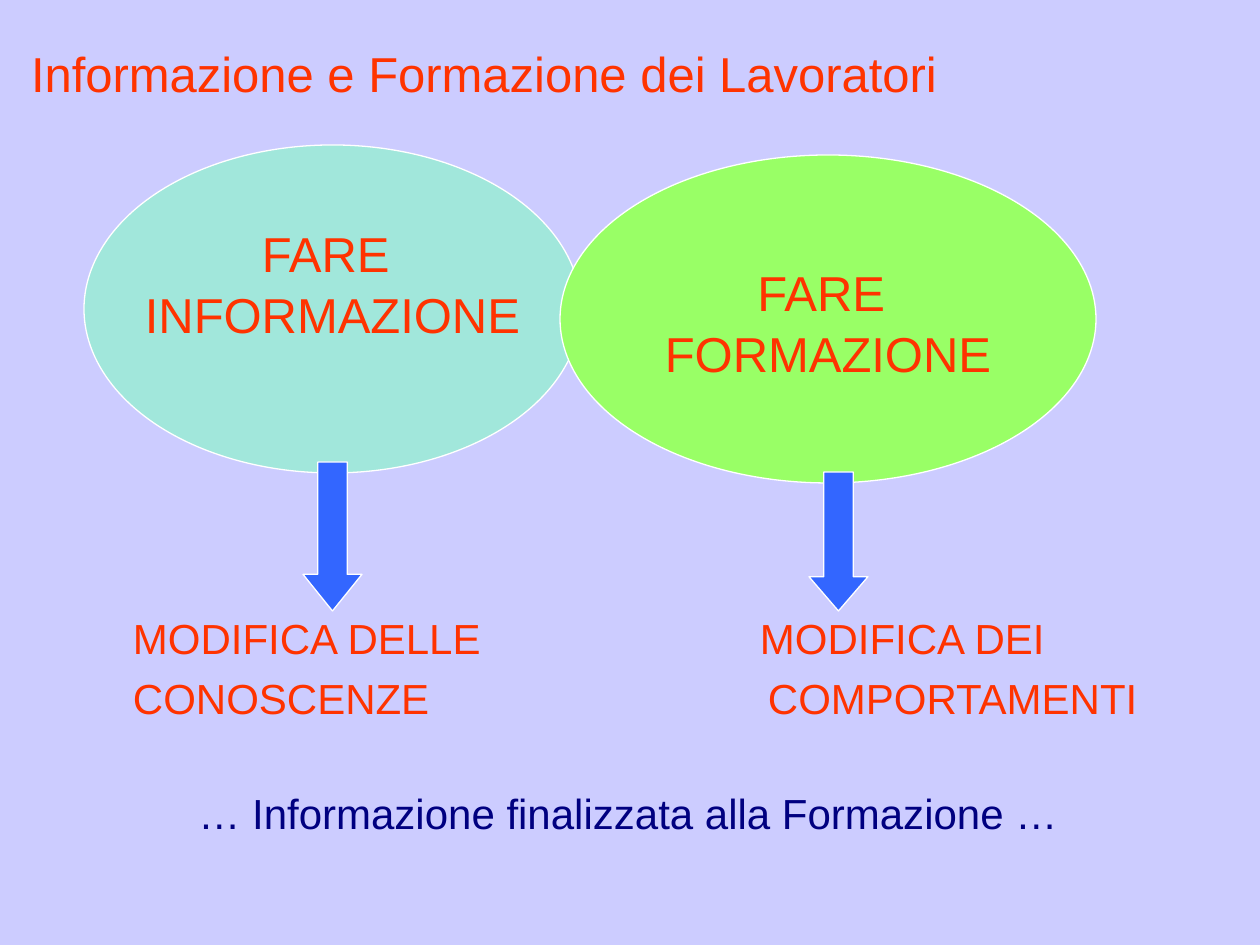
from dataclasses import dataclass

from pptx import Presentation
from pptx.dml.color import RGBColor
from pptx.enum.shapes import MSO_SHAPE
from pptx.enum.text import MSO_ANCHOR, PP_ALIGN
from pptx.util import Emu, Pt

ELLIPSE, DOWN_ARROW = MSO_SHAPE.OVAL, MSO_SHAPE.DOWN_ARROW
LEFT, CENTER = PP_ALIGN.LEFT, PP_ALIGN.CENTER
TOP, MIDDLE = MSO_ANCHOR.TOP, MSO_ANCHOR.MIDDLE
TITLE_ONLY = 5
PX = 914400 // 126
FONT = "Arial"
COLORS = {
    "background": "CCCCFF",
    "text": "FF3300",
    "closing": "000080",
    "information": "A1E7DB",
    "training": "99FF66",
    "arrow": "3366FF",
    "outline": "FFFFFF",
}


@dataclass
class Box:
    left: int
    top: int
    width: int
    height: int

    def emu(self) -> list[Emu]:
        return [Emu(v * PX) for v in (self.left, self.top, self.width, self.height)]


@dataclass
class Topic:
    """An ellipse, the arrow below it and the effect it points to."""
    ellipse: Box
    fill: str
    lines: list[str]
    inset_top: int
    inset_bottom: int
    arrow: Box
    arrow_head: float
    effect: Box
    effect_lines: list[str]
    second_line_margin: int = 0


TOPICS = [
    Topic(Box(84, 145, 497, 328), "information", ["FARE ", "INFORMAZIONE"], 0, 51,
          Box(303, 462, 59, 149), 0.62,
          Box(133, 612, 420, 110), ["MODIFICA DELLE", "CONOSCENZE"]),
    Topic(Box(560, 155, 536, 328), "training", ["FARE ", "FORMAZIONE"], 7, 0,
          Box(809, 472, 59, 139), 0.58,
          Box(760, 612, 420, 110), ["MODIFICA DEI", "COMPORTAMENTI"], 8),
]


def rgb(name: str) -> RGBColor:
    return RGBColor.from_string(COLORS[name])


def write_text(shape, lines: list[str], *, size: int, color: str = "text",
               align=LEFT, anchor=TOP, gap: float = 0, wrap: bool = True,
               inset_top: int = 0, inset_bottom: int = 0) -> None:
    frame = shape.text_frame
    frame.word_wrap = wrap
    frame.vertical_anchor = anchor
    frame.margin_left = frame.margin_right = 0
    frame.margin_top = Emu(inset_top * PX)
    frame.margin_bottom = Emu(inset_bottom * PX)
    for index, line in enumerate(lines):
        paragraph = frame.add_paragraph() if index else frame.paragraphs[0]
        paragraph.alignment = align
        paragraph.space_before = Pt(gap if index else 0)
        run = paragraph.add_run()
        run.text = line
        run.font.name = FONT
        run.font.size = Pt(size)
        run.font.color.rgb = rgb(color)


def add_filled_shape(slide, kind, box: Box, fill: str):
    shape = slide.shapes.add_shape(kind, *box.emu())
    shape.shadow.inherit = False
    shape.fill.solid()
    shape.fill.fore_color.rgb = rgb(fill)
    shape.line.color.rgb = rgb("outline")
    shape.line.width = Pt(0.75)
    return shape


def add_topic(slide, topic: Topic) -> None:
    ellipse = add_filled_shape(slide, ELLIPSE, topic.ellipse, topic.fill)
    write_text(ellipse, topic.lines, size=28, align=CENTER, anchor=MIDDLE, gap=1.3,
               wrap=False, inset_top=topic.inset_top, inset_bottom=topic.inset_bottom)
    arrow = add_filled_shape(slide, DOWN_ARROW, topic.arrow, "arrow")
    arrow.adjustments[1] = topic.arrow_head
    effect = slide.shapes.add_textbox(*topic.effect.emu())
    write_text(effect, topic.effect_lines, size=24, gap=5.5)
    if topic.second_line_margin:
        properties = effect.text_frame.paragraphs[1]._p.get_or_add_pPr()
        properties.set("marL", str(topic.second_line_margin * PX))


def main() -> None:
    presentation = Presentation()
    presentation.slide_width = Emu(1260 * PX)
    presentation.slide_height = Emu(945 * PX)
    slide = presentation.slides.add_slide(presentation.slide_layouts[TITLE_ONLY])
    slide.background.fill.solid()
    slide.background.fill.fore_color.rgb = rgb("background")

    title = slide.shapes.title
    title.left, title.top, title.width, title.height = Box(31, 43, 1180, 57).emu()
    write_text(title, ["Informazione e Formazione dei Lavoratori"], size=28)

    for topic in TOPICS:
        add_topic(slide, topic)

    closing = slide.shapes.add_textbox(*Box(0, 788, 1256, 50).emu())
    write_text(closing, ["… Informazione finalizzata alla Formazione …"],
               size=24, color="closing", align=CENTER)
    presentation.save("out.pptx")


if __name__ == "__main__":
    main()
